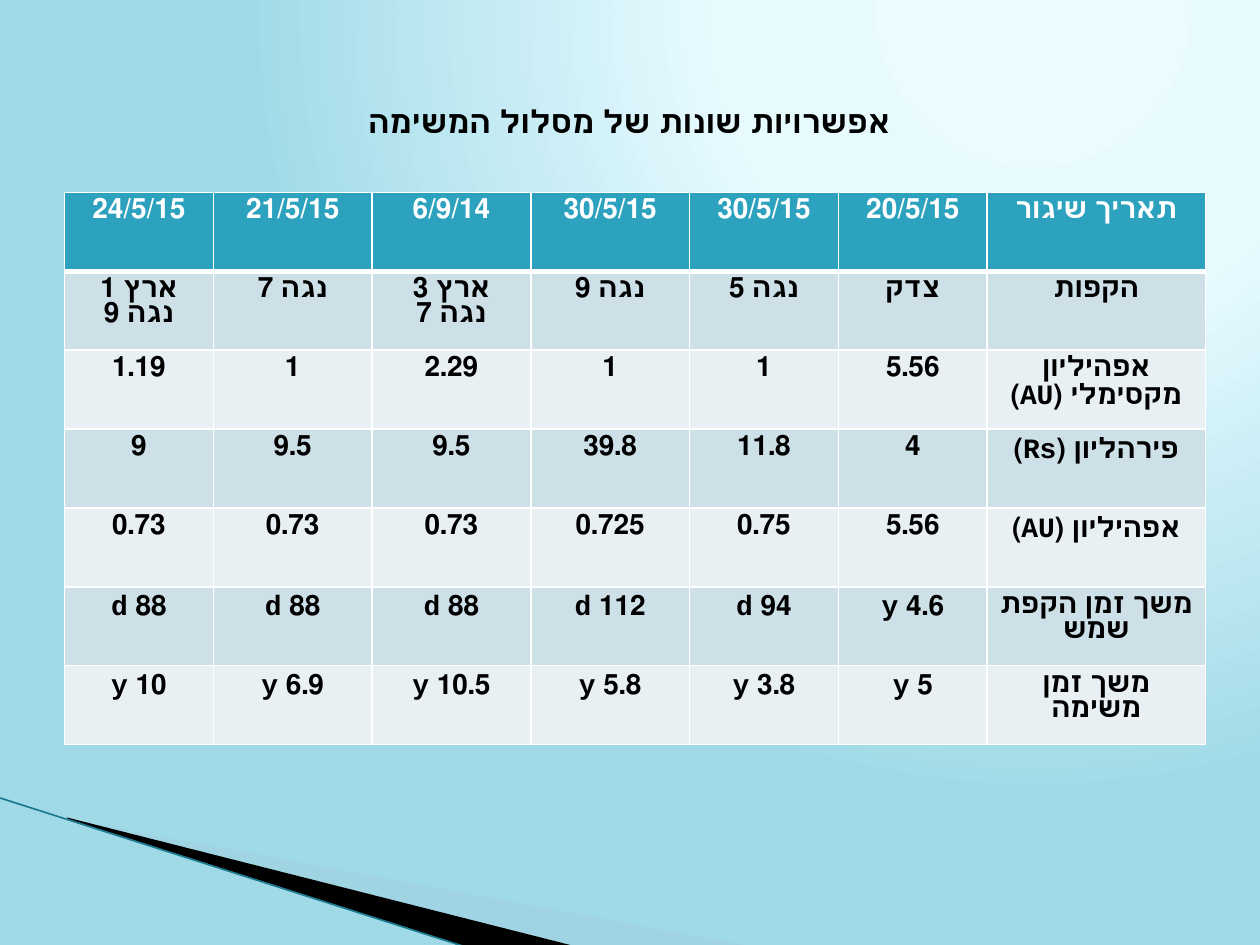
from dataclasses import dataclass

from pptx import Presentation, oxml
from pptx import util as u
from pptx.dml import color
from pptx.enum import shapes, text
from pptx.oxml import ns

FONT = "Courier New"
BLACK, WHITE = "000000", "FFFFFF"
HEADER_FILL = "2DA2BF"
BAND_FILLS = ("CDE0E8", "E8F0F4")
COLUMN_WIDTHS = (3, 3.2, 3.2, 3.2, 3, 3, 4.4)
ROW_HEIGHT = 1.59
ROWS = (
    ("24/5/15", "21/5/15", "6/9/14", "30/5/15", "30/5/15", "20/5/15", "תאריך שיגור"),
    ("ארץ 1\nנגה 9", "נגה 7", "ארץ 3\nנגה 7", "נגה 9", "נגה 5", "צדק", "הקפות"),
    ("1.19", "1", "2.29", "1", "1", "5.56", "אפהיליון מקסימלי (AU)"),
    ("9", "9.5", "9.5", "39.8", "11.8", "4", "פירהליון (Rs)"),
    ("0.73", "0.73", "0.73", "0.725", "0.75", "5.56", "אפהיליון (AU)"),
    ("88 d", "88 d", "88 d", "112 d", "94 d", "4.6 y", "משך זמן הקפת שמש"),
    ("10 y", "6.9 y", "10.5 y", "5.8 y", "3.8 y", "5 y", "משך זמן משימה"),
)


@dataclass(frozen=True)
class Wedge:
    points: tuple[tuple[float, float], ...]
    fill: str
    opacity: int = 100


WEDGES = (
    Wedge(((1.4, 16.52), (15.11, 19.07), (11.58, 19.07), (1.4, 16.5)), "A0CBDC", 40),
    Wedge(((1.35, 16.48), (11.61, 19.08), (9.45, 19.1), (1.37, 16.51)), BLACK),
)


def set_color(target, value: str) -> None:
    target.rgb = color.RGBColor.from_string(value)


def set_fill(target, value: str) -> None:
    target.fill.solid()
    set_color(target.fill.fore_color, value)


def make_xml(body: str):
    tag, rest = body[:-1].split(" ", 1) if " " in body.split(">")[0] else (body.split(">")[0], None)
    start = tag.split(" ")[0]
    return oxml.parse_xml(body.replace(start, f"{start} {ns.nsdecls('a')}", 1))


def paint_background(slide) -> None:
    set_fill(slide.background, WHITE)
    solid = slide.element.find(".//" + ns.qn("p:bgPr")).find(ns.qn("a:solidFill"))
    stops = "".join(
        f'<a:gs pos="{place * 1000}"><a:srgbClr val="{value}"/></a:gs>'
        for place, value in ((0, "EBFBFF"), (40, "E7FBFF"), (100, "A1DAE7"))
    )
    gradient = make_xml(
        f'<a:gradFill rotWithShape="1"><a:gsLst>{stops}</a:gsLst><a:path path="circle">'
        '<a:fillToRect l="65000" t="0" r="0" b="98000"/></a:path></a:gradFill>'
    )
    solid.getparent().replace(solid, gradient)


def draw_wedge(slide, wedge: Wedge) -> None:
    points = [(u.Cm(x), u.Cm(y)) for x, y in wedge.points]
    builder = slide.shapes.build_freeform(*points[0], scale=1.0)
    builder.add_line_segments(points[1:], close=True)
    shape = builder.convert_to_shape()
    shape.shadow.inherit = False
    set_fill(shape, wedge.fill)
    shape.line.fill.background()
    if wedge.opacity < 100:
        value = shape.element.spPr.find(".//" + ns.qn("a:srgbClr"))
        value.append(make_xml(f'<a:alpha val="{wedge.opacity * 1000}"/>'))


def draw_edge(slide) -> None:
    edge = slide.shapes.add_connector(
        shapes.MSO_CONNECTOR.STRAIGHT, u.Cm(-0.02), u.Cm(16.08), u.Cm(9.42), u.Cm(19.1)
    )
    set_color(edge.line.color, "1B7A90")
    edge.line.width = u.Pt(0.95)
    edge.element.spPr.append(make_xml('<a:effectLst/>'.replace("/>", " />")))


def format_text(frame, size: int, value: str, spacing: float) -> None:
    for para in frame.paragraphs:
        para.alignment = text.PP_ALIGN.CENTER
        para.line_spacing = spacing
        para._p.get_or_add_pPr().set("rtl", "1")
        for span in para.runs:
            span.font.name = FONT
            span.font.size = u.Pt(size)
            span.font.bold = True
            set_color(span.font.color, value)


def draw_title(slide) -> None:
    box = slide.shapes.add_textbox(u.Cm(2.49), u.Cm(1.93), u.Cm(20.4), u.Cm(1.02))
    frame = box.text_frame
    frame.word_wrap = True
    frame.auto_size = text.MSO_AUTO_SIZE.SHAPE_TO_FIT_TEXT
    frame.text = "אפשרויות שונות של מסלול המשימה"
    format_text(frame, 18, BLACK, 1.0)


def set_borders(cell, top: int, bottom: int) -> None:
    widths = {"L": 1, "R": 1, "T": top, "B": bottom}
    for index, (side, width) in enumerate(widths.items()):
        border = make_xml(
            f'<a:ln{side} w="{u.Pt(width)}"><a:solidFill><a:srgbClr val="{WHITE}"/>'
            f"</a:solidFill></a:ln{side}>"
        )
        cell._tc.get_or_add_tcPr().insert(index, border)


def draw_table(slide) -> None:
    table = slide.shapes.add_table(
        len(ROWS), len(COLUMN_WIDTHS), u.Cm(1.3), u.Cm(3.88),
        u.Cm(sum(COLUMN_WIDTHS)), u.Cm(ROW_HEIGHT * len(ROWS)),
    ).table
    for column, width in zip(table.columns, COLUMN_WIDTHS):
        column.width = u.Cm(width)
    for r, values in enumerate(ROWS):
        table.rows[r].height = u.Cm(ROW_HEIGHT)
        header = r == 0
        for c, value in enumerate(values):
            cell = table.cell(r, c)
            cell.text_frame.text = value
            format_text(cell.text_frame, 16, WHITE if header else BLACK, 0.9)
            set_fill(cell, HEADER_FILL if header else BAND_FILLS[(r - 1) % 2])
            set_borders(cell, top=3 if r == 1 else 1, bottom=3 if header else 1)


def main() -> None:
    deck = Presentation()
    deck.slide_width, deck.slide_height = u.Cm(25.4), u.Cm(19.05)
    page = deck.slides.add_slide(deck.slide_layouts[6])
    paint_background(page)
    for wedge in WEDGES:
        draw_wedge(page, wedge)
    draw_edge(page)
    draw_title(page)
    draw_table(page)
    deck.save("out.pptx")


if __name__ == "__main__":
    main()
